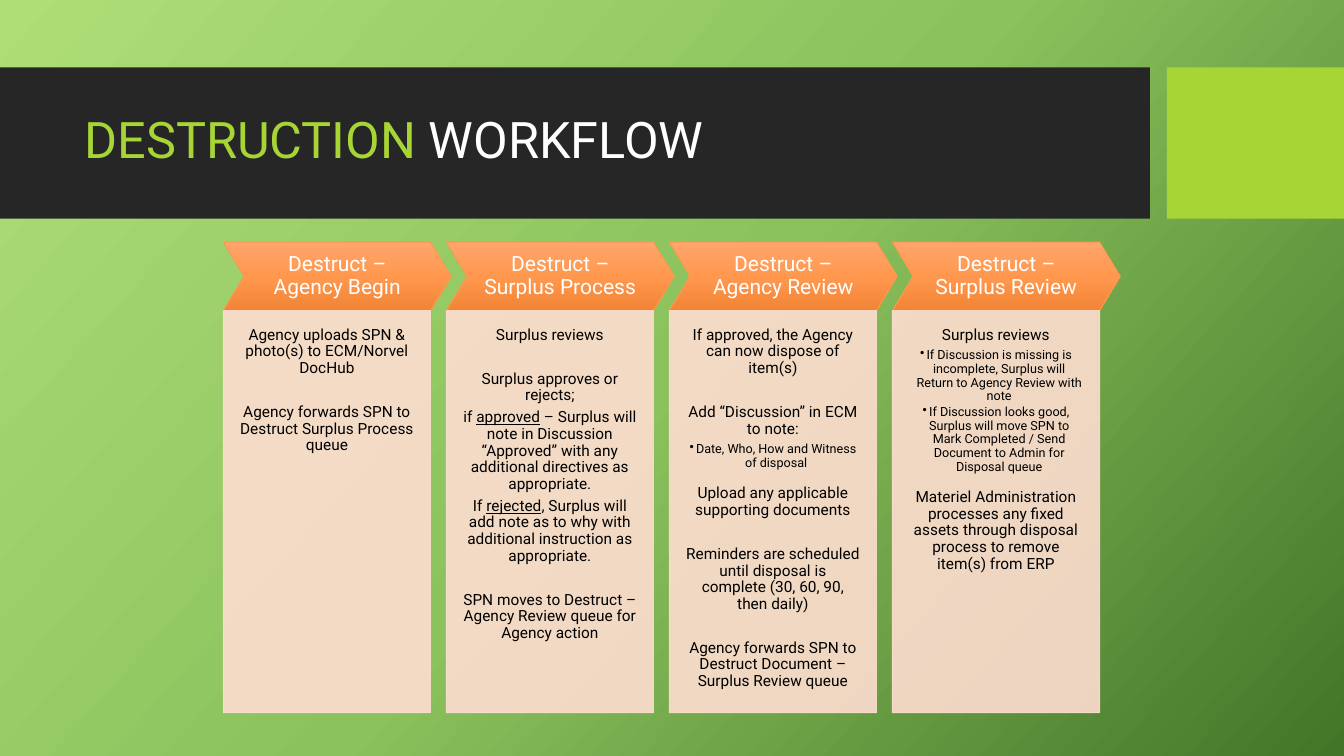
from copy import deepcopy

from lxml import etree
from pptx import Presentation
from pptx import util as u
from pptx.dml.color import RGBColor
from pptx.enum import shapes, text
from pptx.oxml.ns import qn

FONT = "Roboto"
LIME, DARK, WHITE, BLACK = "A7D535", "262626", "FFFFFF", "000000"
PANEL, CHEVRON_LINE = "FEDDD0", "FD9850"
BACKGROUND_STOPS = ["AFDE77", "8BC25D", "437528"]
CHEVRON_STOPS = ["FFA56D", "FF984E", "F28435"]

# Grid of the workflow, in centimetres
LEFT, PITCH, COLUMN_WIDTH, NOTCH = 5.63, 5.62, 5.22, 0.52
CHEVRON_TOP, CHEVRON_HEIGHT = 6.1, 1.73
PANEL_TOP, PANEL_HEIGHT = 7.83, 10.13

# Each step: heading, then (kind, text); "gap" opens a new group, _word_ is underlined
STEPS = [
    ("Destruct – Agency Begin", [
        ("plain", "Agency uploads SPN & photo(s) to ECM/Norvel DocHub"),
        ("gap", "Agency forwards SPN to Destruct Surplus Process queue"),
    ]),
    ("Destruct – Surplus Process", [
        ("plain", "Surplus reviews"),
        ("gap", "Surplus approves or rejects;"),
        ("plain", "if _approved_ – Surplus will note in Discussion “Approved” "
                  "with any additional directives as appropriate."),
        ("plain", "If _rejected_, Surplus will add note as to why with "
                  "additional instruction as appropriate."),
        ("gap", "SPN moves to Destruct – Agency Review queue for Agency action"),
    ]),
    ("Destruct – Agency Review", [
        ("plain", "If approved, the Agency can now dispose of item(s)"),
        ("gap", "Add “Discussion” in ECM to note:"),
        ("bullet", "Date, Who, How and Witness of disposal"),
        ("small gap", "Upload any applicable supporting documents"),
        ("gap", "Reminders are scheduled until disposal is complete "
                "(30, 60, 90, then daily)"),
        ("gap", "Agency forwards SPN to Destruct Document – Surplus Review queue"),
    ]),
    ("Destruct – Surplus Review", [
        ("plain", "Surplus reviews"),
        ("bullet", "If Discussion is missing is incomplete, Surplus will "
                   "Return to Agency Review with note"),
        ("bullet", "If Discussion looks good, Surplus will move SPN to "
                   "Mark Completed / Send Document to Admin for Disposal queue"),
        ("small gap", "Materiel Administration processes any fixed assets "
                      "through disposal process to remove item(s) from ERP"),
    ]),
]
SPACE_BEFORE = {"gap": 15.6, "small gap": 9.8}


def color(hex_string):
    return RGBColor.from_string(hex_string)


def paint_gradient(fill, element, stops, clockwise_angle):
    fill.gradient()
    fill.gradient_angle = 360 - clockwise_angle
    stop_list = element.xpath(".//a:gsLst")[0]
    stop_list.append(deepcopy(stop_list[-1]))
    for index, (stop, hex_string) in enumerate(zip(fill.gradient_stops, stops)):
        stop.color.rgb = color(hex_string)
        stop.position = index / (len(stops) - 1)


def set_opacity(shape, percent):
    """Applies to the solid fill and to the outline."""
    for tint in shape.element.spPr.iter(qn("a:srgbClr")):
        etree.SubElement(tint, qn("a:alpha"), val=str(percent * 1000))


def add_block(slide, left, top, width, height, fill, line=None):
    shape = slide.shapes.add_shape(
        shapes.MSO_SHAPE.RECTANGLE, u.Cm(left), u.Cm(top), u.Cm(width), u.Cm(height))
    shape.shadow.inherit = False
    shape.fill.solid()
    shape.fill.fore_color.rgb = color(fill)
    if line:
        shape.line.color.rgb = color(line)
        shape.line.width = u.Pt(0.75)
    else:
        shape.line.fill.background()
    return shape


def add_run(paragraph, words, size, hex_string):
    run = paragraph.add_run()
    run.text = words
    run.font.name = FONT
    run.font.size = u.Pt(size)
    run.font.color.rgb = color(hex_string)
    return run


def set_frame(shape, anchor, left, top, right, bottom):
    frame = shape.text_frame
    frame.word_wrap = True
    frame.vertical_anchor = anchor
    frame.margin_left, frame.margin_top = u.Cm(left), u.Cm(top)
    frame.margin_right, frame.margin_bottom = u.Cm(right), u.Cm(bottom)
    return frame


def add_title(slide):
    title = slide.shapes.title
    title.left, title.top = u.Cm(1.88), u.Cm(2.08)
    title.width, title.height = u.Cm(26.7), u.Cm(3)
    frame = set_frame(title, text.MSO_ANCHOR.MIDDLE, 0.25, 0.13, 0.25, 0.13)
    frame.auto_size = text.MSO_AUTO_SIZE.NONE
    paragraph = frame.paragraphs[0]
    paragraph.alignment = text.PP_ALIGN.LEFT
    paragraph.line_spacing = 0.9
    add_run(paragraph, "DESTRUCTION", 36, LIME)
    add_run(paragraph, " WORKFLOW", 36, WHITE)
    # Bring the title in front of the band
    title.element.getparent().append(title.element)


def add_chevron(slide, left, heading):
    right, bottom = left + COLUMN_WIDTH, CHEVRON_TOP + CHEVRON_HEIGHT
    middle = CHEVRON_TOP + CHEVRON_HEIGHT / 2
    outline = [(right, CHEVRON_TOP), (right + NOTCH, middle), (right, bottom),
               (left, bottom), (left + NOTCH, middle)]
    builder = slide.shapes.build_freeform(u.Cm(left), u.Cm(CHEVRON_TOP))
    builder.add_line_segments([(u.Cm(x), u.Cm(y)) for x, y in outline], close=True)
    shape = builder.convert_to_shape()
    shape.shadow.inherit = False
    paint_gradient(shape.fill, shape.element, CHEVRON_STOPS, 90)
    shape.line.color.rgb = color(CHEVRON_LINE)
    shape.line.width = u.Pt(0.75)
    frame = set_frame(shape, text.MSO_ANCHOR.MIDDLE, 0.73, 0.2, 0.73, 0.2)
    paragraph = frame.paragraphs[0]
    paragraph.alignment = text.PP_ALIGN.CENTER
    paragraph.line_spacing = 0.9
    add_run(paragraph, heading, 15, WHITE)


def add_bullet(paragraph):
    properties = paragraph._p.get_or_add_pPr()
    properties.set("marL", str(u.Cm(0.16)))
    properties.set("indent", str(-u.Cm(0.16)))
    etree.SubElement(properties, qn("a:buChar"), char="•")


def add_panel(slide, left, items):
    shape = add_block(slide, left, PANEL_TOP, COLUMN_WIDTH, PANEL_HEIGHT, PANEL, PANEL)
    set_opacity(shape, 90)
    frame = set_frame(shape, text.MSO_ANCHOR.TOP, 0.41, 0.41, 0.41, 0.81)
    for index, (kind, words) in enumerate(items):
        paragraph = frame.add_paragraph() if index else frame.paragraphs[0]
        size, space_after = 11, 3.85
        if kind == "bullet":
            size, space_after = 9, 1.35
            paragraph.level = 1
            add_bullet(paragraph)
        paragraph.alignment = text.PP_ALIGN.CENTER
        paragraph.line_spacing = 0.9
        paragraph.space_after = u.Pt(space_after)
        if kind in SPACE_BEFORE:
            paragraph.space_before = u.Pt(SPACE_BEFORE[kind])
        for part, piece in enumerate(words.split("_")):
            run = add_run(paragraph, piece, size, BLACK)
            if part % 2:
                run.font.underline = True


def main():
    presentation = Presentation()
    presentation.slide_width, presentation.slide_height = u.Cm(33.87), u.Cm(19.05)
    slide = presentation.slides.add_slide(presentation.slide_layouts[5])
    paint_gradient(slide.background.fill, slide.element, BACKGROUND_STOPS, 42)

    # Title band
    add_block(slide, 0, 1.7, 28.98, 3.81, DARK)
    add_block(slide, 29.41, 1.7, 4.46, 3.81, LIME)
    add_title(slide)

    # Workflow columns
    for index, (heading, items) in enumerate(STEPS):
        left = LEFT + index * PITCH
        add_chevron(slide, left, heading)
        add_panel(slide, left, items)

    presentation.save("out.pptx")


if __name__ == "__main__":
    main()
